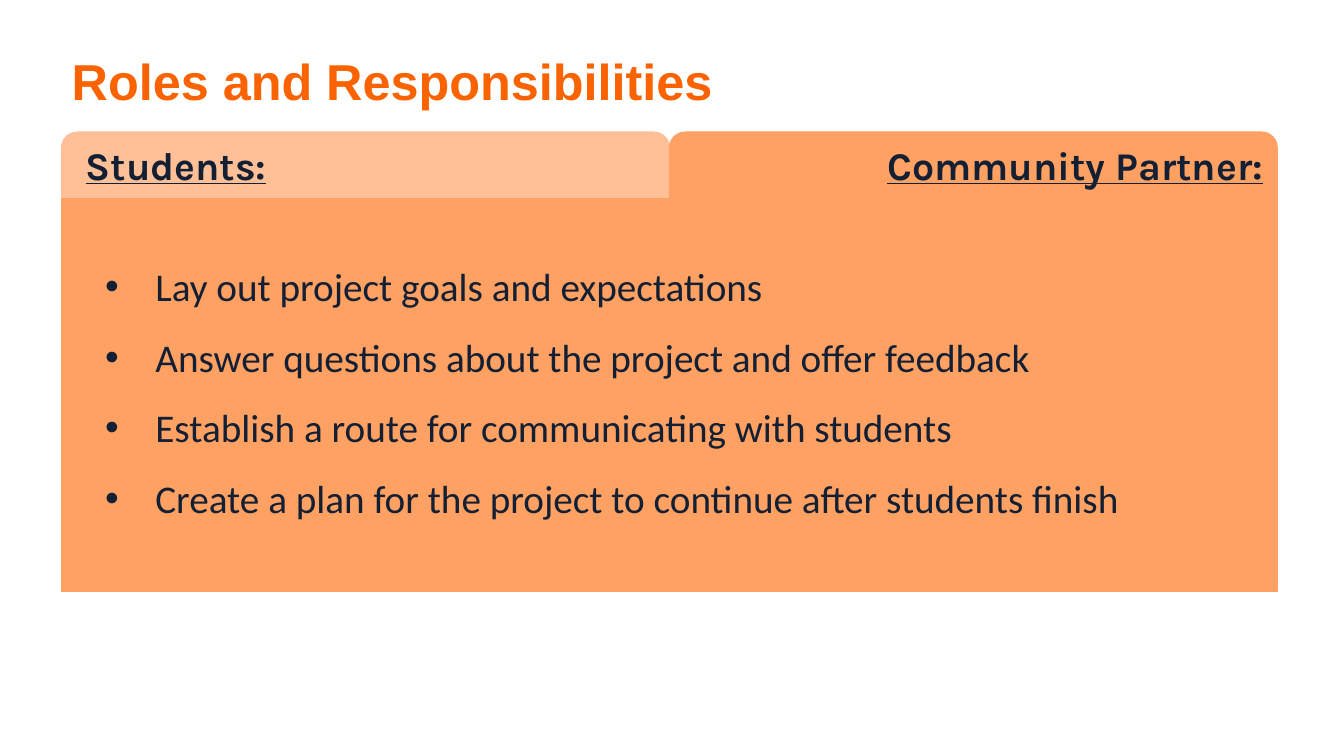
from pptx import Presentation
from pptx.dml.color import RGBColor as RGB
from pptx.enum.shapes import MSO_SHAPE as Kind
from pptx.enum.text import MSO_ANCHOR as Anchor, MSO_AUTO_SIZE as Fit, PP_ALIGN as Align
from pptx.oxml.ns import qn
from pptx.util import Pt
from lxml.etree import SubElement

COLORS = {"title": "FA6300", "ink": "131F33", "pale": "FFC097", "orange": "FFA163"}
DUTIES = [
    "Lay out project goals and expectations",
    "Answer questions about the project and offer feedback",
    "Establish a route for communicating with students",
    "Create a plan for the project to continue after students finish",
]


def style(item, **values):
    for name, value in values.items():
        setattr(item, name, value)


def place(shape, box):
    style(shape, **dict(zip(("left", "top", "width", "height"), map(Pt, box))))


def write(para, text, color, **font):
    run = para.add_run()
    run.text = text
    style(run.font, **font)
    run.font.color.rgb = RGB.from_string(COLORS[color])


def block(slide, kind, box, color):
    shape = slide.shapes.add_shape(kind, *map(Pt, box))
    shape.shadow.inherit = False
    shape.fill.solid()
    for paint in (shape.fill.fore_color, shape.line.color):
        paint.rgb = RGB.from_string(COLORS[color])
    shape.line.width = Pt(0.75)
    return shape


def heading(slide, box):
    title = slide.shapes.title
    place(title, box)
    frame = title.text_frame
    style(frame, auto_size=Fit.NONE, vertical_anchor=Anchor.TOP, word_wrap=True)
    para = frame.paragraphs[0]
    para.alignment = Align.LEFT
    write(para, "Roles and Responsibilities", "title", name="Arial", size=Pt(36), bold=True)


def tabs(slide, box):
    left, top, width, height = box
    half = width / 2
    labels = [("Students:", "pale", Align.LEFT, 14),
              ("Community Partner:", "orange", Align.RIGHT, 7.2)]
    for i, (text, color, align, inset) in enumerate(labels):
        tab = block(slide, Kind.ROUNDED_RECTANGLE, (left + i * half, top, half, height), color)
        style(tab.text_frame, vertical_anchor=Anchor.TOP, margin_left=Pt(inset), word_wrap=True)
        para = tab.text_frame.paragraphs[0]
        para.alignment = align
        write(para, text, "ink", name="Karla", size=Pt(28), bold=True, underline=True)


def panel(slide, box):
    left, top, width, height = box
    block(slide, Kind.RECTANGLE, box, "orange")

    # Duties list, brought in front of the panel
    body = slide.placeholders[1]
    place(body, (left + 23.8, top + 25.2, width - 44, height - 75))
    tree = body.element.getparent()
    tree.append(body.element)
    frame = body.text_frame
    style(frame, auto_size=Fit.NONE, vertical_anchor=Anchor.TOP, word_wrap=True)
    for i, text in enumerate(DUTIES):
        para = frame.add_paragraph() if i else frame.paragraphs[0]
        style(para, alignment=Align.LEFT, line_spacing=1.5, space_before=Pt(0))
        props = para._p.get_or_add_pPr()
        props.set("marL", str(Pt(36)))
        props.set("indent", str(Pt(-36)))
        SubElement(props, qn("a:buFont"), typeface="Arial")
        SubElement(props, qn("a:buChar"), char="•")
        write(para, text, "ink", name="Calibri", size=Pt(28))


def main():
    deck = Presentation()
    style(deck, slide_width=Pt(960), slide_height=Pt(540))
    slide = deck.slides.add_slide(deck.slide_layouts[1])
    left, width = 44, 868.4
    heading(slide, (left, 32.4, 512.6, 51))
    tabs(slide, (left, 94.3, width, 67))
    panel(slide, (left, 141.8, width, 280.8))
    deck.save("out.pptx")


if __name__ == "__main__":
    main()
